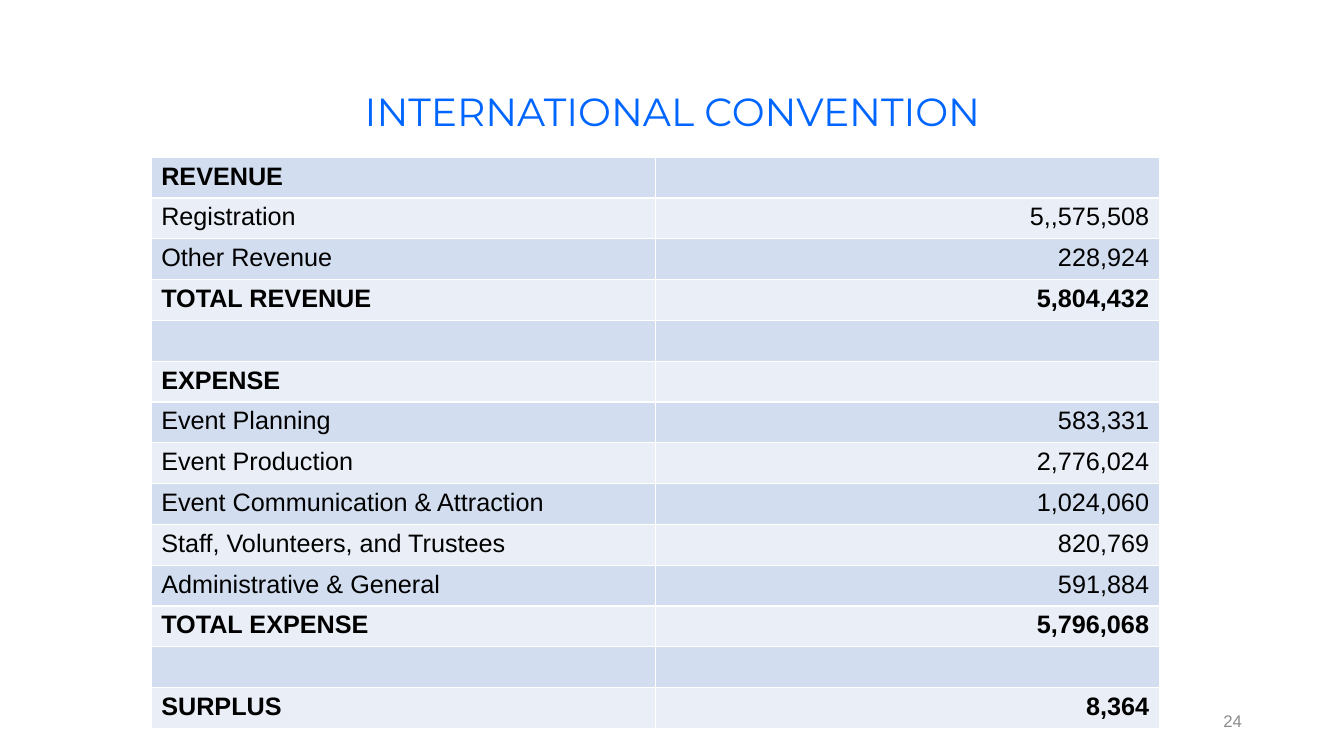
from dataclasses import dataclass

import pptx
import pptx.dml.color
import pptx.enum.text
import pptx.oxml
import pptx.oxml.ns
import pptx.util

SLIDE_WIDTH = pptx.util.Inches(13.33)
SLIDE_HEIGHT = pptx.util.Inches(7.5)
ALIGN = pptx.enum.text.PP_ALIGN
MIDDLE = pptx.enum.text.MSO_ANCHOR.MIDDLE
BAND_COLORS = ("D2DEEF", "EAEFF7")
BORDER_COLOR = "FFFFFF"


@dataclass(frozen=True)
class Area:
    """A rectangle in percent of the slide's width and height."""
    left: float
    top: float
    width: float
    height: float

    def lengths(self) -> tuple[int, int, int, int]:
        return (
            round(SLIDE_WIDTH * self.left / 100),
            round(SLIDE_HEIGHT * self.top / 100),
            round(SLIDE_WIDTH * self.width / 100),
            round(SLIDE_HEIGHT * self.height / 100),
        )


@dataclass(frozen=True)
class BudgetLine:
    label: str = ""
    amount: str = ""
    bold: bool = False


TITLE_AREA = Area(6.9, 5.33, 86.25, 19.33)
NUMBER_AREA = Area(70.65, 92.67, 22.5, 5.33)
TABLE_AREA = Area(11.25, 20.8, 75, 75.6)

BUDGET = (
    BudgetLine("REVENUE", bold=True),
    BudgetLine("Registration", "5,,575,508"),
    BudgetLine("Other Revenue", "228,924"),
    BudgetLine("TOTAL REVENUE", "5,804,432", bold=True),
    BudgetLine(),
    BudgetLine("EXPENSE", bold=True),
    BudgetLine("Event Planning", "583,331"),
    BudgetLine("Event Production", "2,776,024"),
    BudgetLine("Event Communication & Attraction", "1,024,060"),
    BudgetLine("Staff, Volunteers, and Trustees", "820,769"),
    BudgetLine("Administrative & General", "591,884"),
    BudgetLine("TOTAL EXPENSE", "5,796,068", bold=True),
    BudgetLine(),
    BudgetLine("SURPLUS", "8,364", bold=True),
)


def color(value: str) -> pptx.dml.color.RGBColor:
    return pptx.dml.color.RGBColor.from_string(value)


def write_text(text_frame, text: str, *, size: float = 18, font: str = "Arial",
               fill: str = "000000", bold: bool = False,
               align=ALIGN.LEFT, line_spacing: float = 1.0) -> None:
    paragraph = text_frame.paragraphs[0]
    paragraph.alignment = align
    paragraph.line_spacing = line_spacing
    run = paragraph.add_run()
    run.text = text
    run.font.size = pptx.util.Pt(size)
    run.font.name = font
    run.font.bold = bold
    run.font.color.rgb = color(fill)


def add_text(slide, area: Area, text: str, **text_format) -> None:
    text_frame = slide.shapes.add_textbox(*area.lengths()).text_frame
    text_frame.word_wrap = True
    text_frame.vertical_anchor = MIDDLE
    write_text(text_frame, text, **text_format)


def add_borders(cell) -> None:
    properties = cell._tc.get_or_add_tcPr()
    for side in ("lnL", "lnR", "lnT", "lnB"):
        properties.append(pptx.oxml.parse_xml(
            f'<a:{side} {pptx.oxml.ns.nsdecls("a")} w="{pptx.util.Pt(1)}">'
            f'<a:solidFill><a:srgbClr val="{BORDER_COLOR}"/></a:solidFill>'
            f'</a:{side}>'))


def add_budget_table(slide, area: Area, budget: tuple[BudgetLine, ...]) -> None:
    table = slide.shapes.add_table(len(budget), 2, *area.lengths()).table
    table.first_row = False
    table.horz_banding = False
    for row_index, line in enumerate(budget):
        entries = ((line.label, ALIGN.LEFT), (line.amount, ALIGN.RIGHT))
        for column_index, (text, align) in enumerate(entries):
            cell = table.cell(row_index, column_index)
            add_borders(cell)
            cell.fill.solid()
            cell.fill.fore_color.rgb = color(BAND_COLORS[row_index % 2])
            if text:
                write_text(cell.text_frame, text, bold=line.bold, align=align)


def main() -> None:
    presentation = pptx.Presentation()
    presentation.slide_width = SLIDE_WIDTH
    presentation.slide_height = SLIDE_HEIGHT
    slide = presentation.slides.add_slide(presentation.slide_layouts[6])
    add_text(slide, TITLE_AREA, "INTERNATIONAL CONVENTION", size=28,
             font="Montserrat", fill="0066FF", align=ALIGN.CENTER,
             line_spacing=0.9)
    add_text(slide, NUMBER_AREA, "24", size=12, fill="8C8C8C",
             align=ALIGN.RIGHT)
    add_budget_table(slide, TABLE_AREA, BUDGET)
    presentation.save("out.pptx")


if __name__ == "__main__":
    main()
